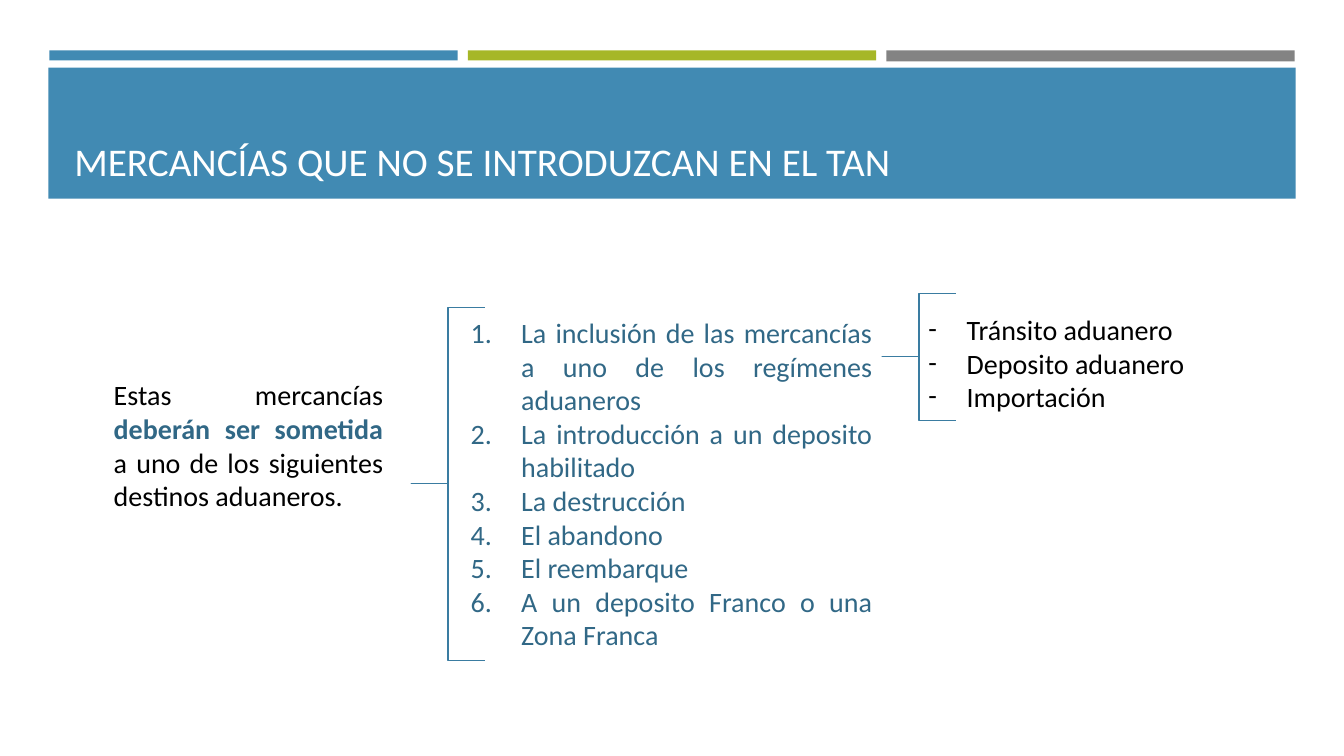
from pptx import Presentation
from pptx.dml.color import RGBColor
from pptx.enum.shapes import MSO_SHAPE
from pptx.enum.text import MSO_ANCHOR, PP_ALIGN
from pptx.oxml import parse_xml
from pptx.oxml.ns import nsdecls
from pptx.util import Pt

PX = 9144  # 100 px to the inch

BLUE = RGBColor(0x41, 0x8A, 0xB3)
GREEN = RGBColor(0xA6, 0xB7, 0x27)
GRAY = RGBColor(0x83, 0x83, 0x83)
DARK_BLUE = RGBColor(0x31, 0x68, 0x86)
BRACE_BLUE = RGBColor(0x3A, 0x7C, 0xA1)
WHITE = RGBColor(0xFF, 0xFF, 0xFF)
BLACK = RGBColor(0x00, 0x00, 0x00)

prs = Presentation()
prs.slide_width = 1333 * PX
prs.slide_height = 750 * PX
slide = prs.slides.add_slide(prs.slide_layouts[6])


def add_text(box, paragraphs, size, color, align):
    """Add a wrapped text box with one paragraph per string."""
    left, top, width, height = (n * PX for n in box)
    frame = slide.shapes.add_textbox(left, top, width, height).text_frame
    frame.word_wrap = True
    frame.text = "\n".join(paragraphs)
    for paragraph in frame.paragraphs:
        paragraph.alignment = align
        for run in paragraph.runs:
            run.font.name = "Calibri"
            run.font.size = Pt(size)
            run.font.color.rgb = color
    return frame


def add_bullets(frame, indent, bullet):
    for paragraph in frame.paragraphs:
        props = paragraph._p.get_or_add_pPr()
        props.set("marL", str(indent * PX))
        props.set("indent", str(-indent * PX))
        props.append(parse_xml(f'<a:buFont {nsdecls("a")} typeface="Calibri"/>'))
        props.append(parse_xml(f'<a:{bullet} {nsdecls("a")}/>'))


# Header: three accent strips above the title band
header_parts = [
    (49, 50, 405, 10, BLUE),
    (464, 50, 405, 10, GREEN),
    (879, 50, 405, 11, GRAY),
    (48, 67, 1237, 130, BLUE),
]
for left, top, width, height, color in header_parts:
    part = slide.shapes.add_shape(
        MSO_SHAPE.RECTANGLE, left * PX, top * PX, width * PX, height * PX)
    part.shadow.inherit = False
    part.fill.solid()
    part.fill.fore_color.rgb = color
    part.line.fill.background()

title = add_text((64, 77, 1206, 111), ["MERCANCÍAS QUE NO SE INTRODUZCAN EN EL TAN"],
                 28, WHITE, PP_ALIGN.LEFT)
title.vertical_anchor = MSO_ANCHOR.BOTTOM

# Premise, with the obligation emphasised
premise = add_text((103, 370, 287, 145), ["Estas mercancías "], 20, BLACK, PP_ALIGN.JUSTIFY)
for text, color, bold in [
    ("deberán ser sometida ", DARK_BLUE, True),
    ("a uno de los siguientes destinos aduaneros.", BLACK, False),
]:
    run = premise.paragraphs[0].add_run()
    run.text = text
    run.font.name = "Calibri"
    run.font.size = Pt(20)
    run.font.bold = bold
    run.font.color.rgb = color

# Customs destinations, and the regimes that the first one opens into
destinations = add_text((457, 308, 418, 347), [
    "La inclusión de las mercancías a uno de los regímenes aduaneros",
    "La introducción a un deposito habilitado",
    "La destrucción",
    "El abandono",
    "El reembarque",
    "A un deposito Franco o una Zona Franca",
], 20, DARK_BLUE, PP_ALIGN.JUSTIFY)
add_bullets(destinations, 50, 'buAutoNum type="arabicPeriod"')
# Closing tag is not needed: each bullet element is self-closing

regimes = add_text((911, 305, 287, 111), [
    "Tránsito aduanero",
    "Deposito aduanero",
    "Importación",
], 20, BLACK, PP_ALIGN.JUSTIFY)
add_bullets(regimes, 38, 'buChar char="-"')

for left, top, height in [(408, 305, 350), (875, 291, 126)]:
    brace = slide.shapes.add_shape(
        MSO_SHAPE.LEFT_BRACE, left * PX, top * PX, 73 * PX, height * PX)
    brace.adjustments[0] = 0
    brace.adjustments[1] = 0.5
    brace.shadow.inherit = False
    brace.fill.background()
    brace.line.color.rgb = BRACE_BLUE
    brace.line.width = Pt(1)

prs.save("out.pptx")
